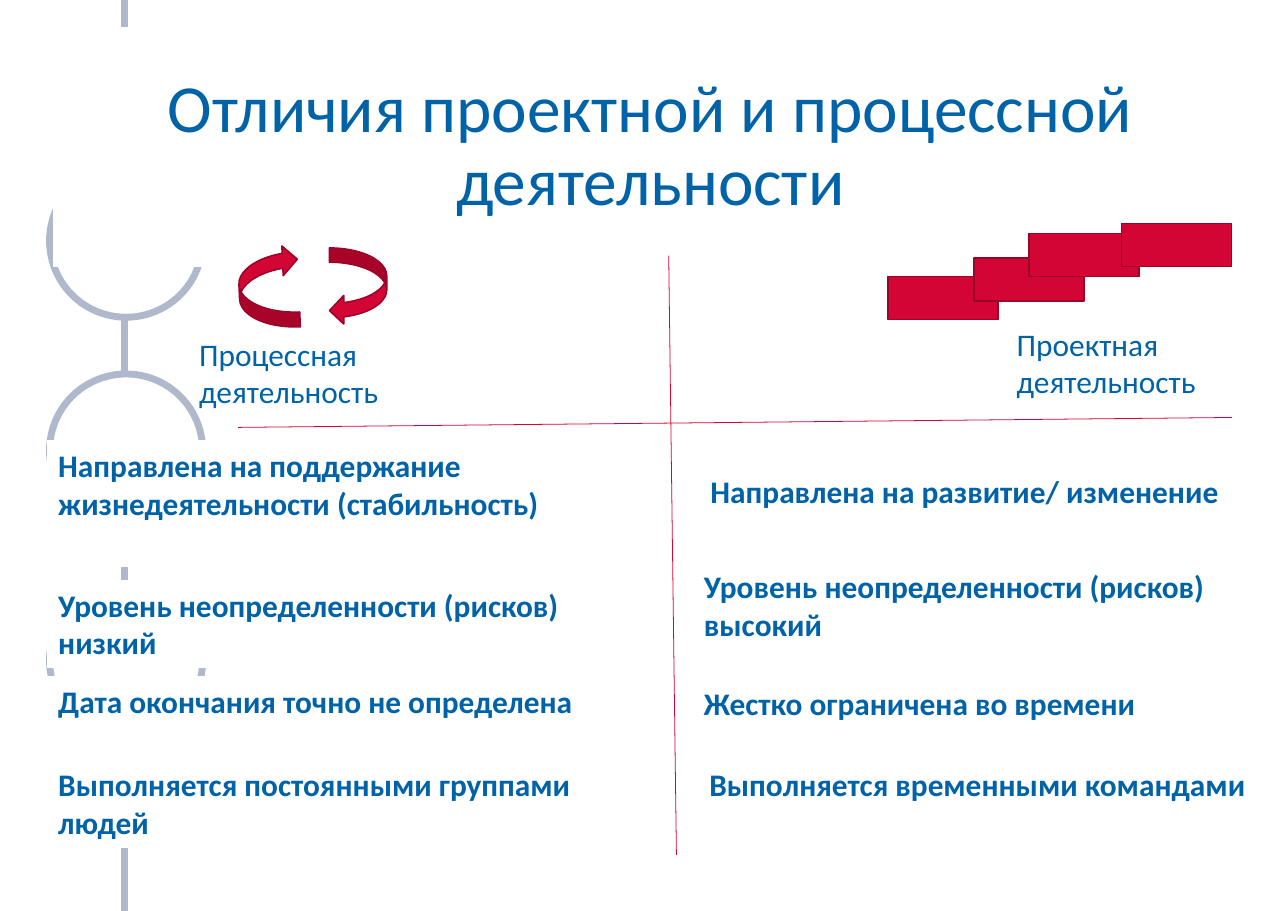
from lxml import etree
from pptx import Presentation
from pptx import util as u
from pptx.dml.color import RGBColor
from pptx.enum import shapes, text
from pptx.oxml.ns import qn

WHITE = RGBColor(0xFF, 0xFF, 0xFF)
BLUE = RGBColor(0x00, 0x62, 0xA7)
GREY = RGBColor(0xB0, 0xB9, 0xCB)
RED = RGBColor(0xD3, 0x05, 0x35)
DARK_RED = RGBColor(0x9C, 0x04, 0x27)
SHAPE = shapes.MSO_SHAPE

RING_TOP, RING_STEP = 18.02, 23.03
STEP_CORNERS = [(68.95, 30.35), (75.62, 28.3), (79.9, 25.63), (87.08, 24.55)]
LABELS = [
    (14.63, 36.15, "Процессная деятельность"),
    (78.1, 35.07, "Проектная деятельность"),
]
STATEMENTS = [
    ((3.68, 48.37, 44.74, 13.78), "Направлена на поддержание жизнедеятельности (стабильность)"),
    ((3.68, 63.72, 44.74, 9.55), "Уровень неопределенности (рисков) низкий"),
    ((3.68, 74.24, 46.96, 9.55), "Дата окончания точно не определена"),
    ((3.68, 83.43, 46.96, 9.55), "Выполняется постоянными группами людей"),
    ((54.32, 51.27, 45.68, 9.55), "Направлена на развитие/ изменение"),
    ((53.81, 61.67, 43.37, 9.55), "Уровень неопределенности (рисков) высокий"),
    ((53.81, 74.49, 44.82, 5.44), "Жестко ограничена во времени"),
    ((54.23, 83.43, 44.4, 9.55), "Выполняется временными командами"),
]


def write(sp, words, size=20.5, bold=False, align=text.PP_ALIGN.LEFT,
          anchor=text.MSO_ANCHOR.TOP, spacing=None):
    tf = sp.text_frame
    tf.word_wrap = True
    tf.auto_size = text.MSO_AUTO_SIZE.NONE
    tf.vertical_anchor = anchor
    p = tf.paragraphs[0]
    p.alignment = align
    p.line_spacing = spacing
    r = p.add_run()
    r.text = words
    r.font.name, r.font.size, r.font.bold = "Calibri", u.Pt(size), bold
    r.font.color.rgb = BLUE


def paint(sp, fill, line, width):
    sp.fill.solid()
    sp.fill.fore_color.rgb = fill
    sp.line.color.rgb = line
    sp.line.width = u.Pt(width)


class Board:
    """Draws on one slide; all lengths are percent of its width or height."""

    def __init__(self, prs):
        self.width, self.height = prs.slide_width, prs.slide_height
        self.s = prs.slides.add_slide(prs.slide_layouts[5])

    def place(self, x, y):
        return round(self.width * x / 100), round(self.height * y / 100)

    def box(self, x, y, w, h):
        return *self.place(x, y), *self.place(w, h)

    def title(self, area, words):
        """Fill the title and bring it in front of what is drawn so far."""
        sp = self.s.shapes.title
        sp.left, sp.top, sp.width, sp.height = self.box(*area)
        paint(sp, WHITE, WHITE, 1)
        write(sp, words, size=44, align=text.PP_ALIGN.CENTER,
              anchor=text.MSO_ANCHOR.MIDDLE, spacing=0.9)
        sp.element.getparent().append(sp.element)

    def shape(self, kind, area, fill=RED, line=DARK_RED, width=1, turn=0):
        sp = self.s.shapes.add_shape(kind, *self.box(*area))
        sp.shadow.inherit = False
        sp.rotation = turn
        paint(sp, fill, line, width)
        return sp

    def line(self, start, end, color=RED, width=0.5):
        cn = self.s.shapes.add_connector(
            shapes.MSO_CONNECTOR.STRAIGHT, *self.place(*start), *self.place(*end))
        cn.line.color.rgb = color
        cn.line.width = u.Pt(width)
        etree.SubElement(cn.element.spPr, qn("a:effectLst"))

    def label(self, area, words):
        write(self.s.shapes.add_textbox(*self.box(*area)), words)

    def statement(self, area, words):
        write(self.shape(SHAPE.RECTANGLE, area, WHITE, WHITE), words, bold=True)


def main():
    prs = Presentation()
    prs.slide_width, prs.slide_height = u.Inches(11.69), u.Inches(8.27)
    board = Board(prs)

    board.line((9.67, 100), (9.67, 0), GREY, 4.5)
    for i in range(3):
        ring = (3.85, RING_TOP + i * RING_STEP, 11.89, 16.81)
        board.shape(SHAPE.OVAL, ring, WHITE, GREY, 4.5)
    board.title((4.19, 3.02, 92.64, 26.24),
                "Отличия проектной и процессной деятельности")

    board.shape(SHAPE.CURVED_LEFT_ARROW, (25.58, 27.21, 4.45, 8.46))
    board.shape(SHAPE.CURVED_LEFT_ARROW, (18.56, 26.96, 4.62, 9.07), turn=177.4)
    for x, y in STEP_CORNERS:
        board.shape(SHAPE.RECTANGLE, (x, y, 8.55, 4.72))
    for x, y, words in LABELS:
        board.label((x, y, 21.98, 9.55), words)

    board.line((51.92, 28.05), (52.52, 93.83))
    board.line((18.48, 46.92), (95.64, 45.83))
    for area, words in STATEMENTS:
        board.statement(area, words)
    prs.save("out.pptx")


if __name__ == "__main__":
    main()
